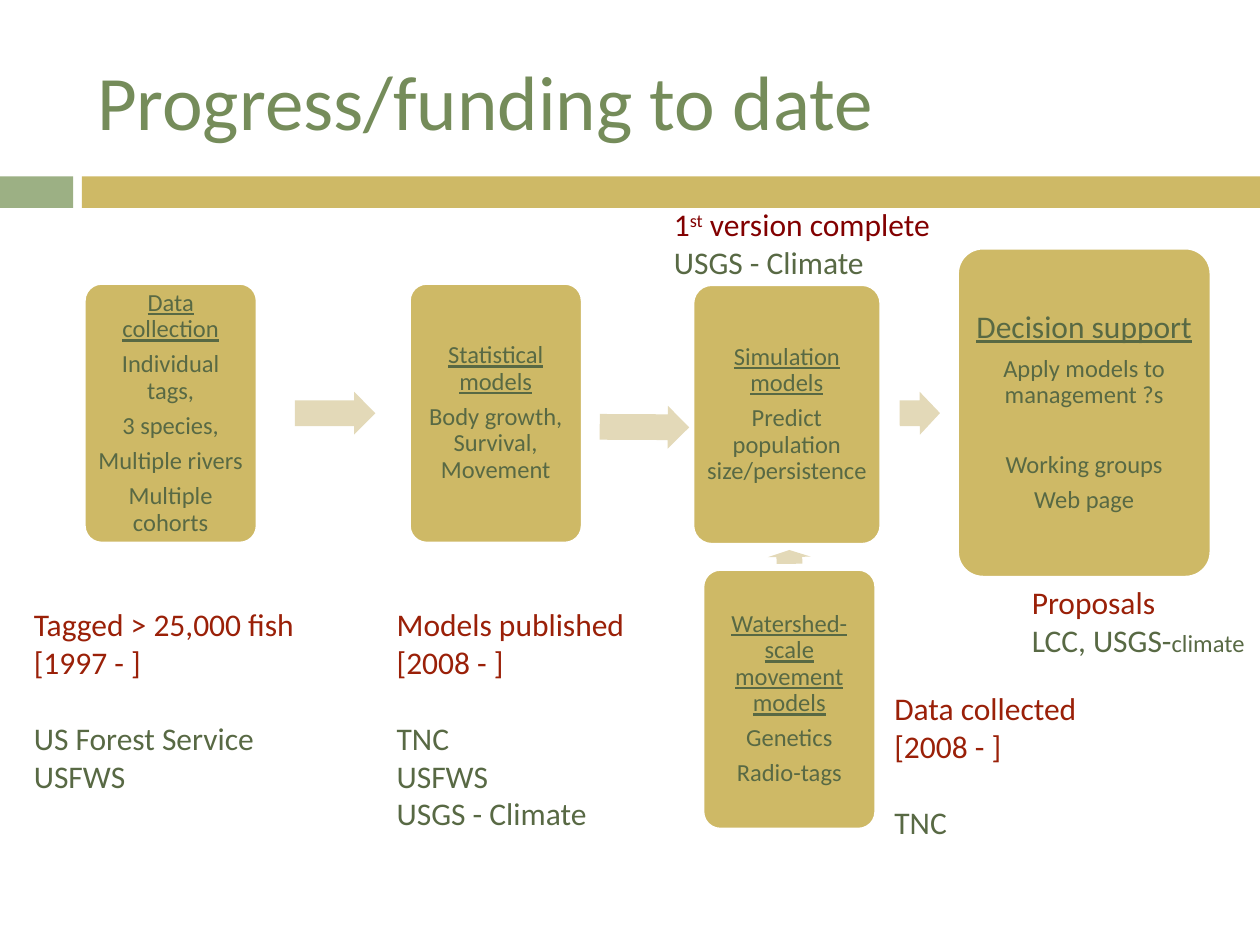
import pptx
import pptx.dml.color
import pptx.enum.shapes
import pptx.enum.text
import pptx.util

Inches = pptx.util.Inches
Pt = pptx.util.Pt
SHAPES = pptx.enum.shapes.MSO_SHAPE
ALIGN = pptx.enum.text.PP_ALIGN
ANCHOR = pptx.enum.text.MSO_ANCHOR

FONT = "Calibri"
GOLD = "CEB966"
PALE_GOLD = "E3D9B8"
SAGE = "9CB084"
TITLE_GREEN = "758C5A"
DARK_GREEN = "586944"
RED = "9A2008"
DARK_RED = "820000"
WHITE = "FFFFFF"
BODY_SIZE = 14
CAPTION_SIZE = 18
BODY_LINE_GAP = 20
CAPTION_LINE_GAP = 22

# left, top, width, height, margin, heading size, heading, body lines
STAGES = [
    (0.67, 2.25, 1.37, 2.06, 0.06, 14, "Data collection",
     ["Individual tags,", "3 species,", "Multiple rivers", "Multiple cohorts"]),
    (3.25, 2.25, 1.37, 2.06, 0.06, 14, "Statistical models",
     ["Body growth, Survival, Movement"]),
    (5.58, 4.52, 1.37, 2.06, 0.06, 14, "Watershed-scale movement models",
     ["Genetics", "Radio-tags"]),
    (5.5, 2.26, 1.49, 2.06, 0.06, 14, "Simulation models",
     ["Predict population size/persistence"]),
    (7.6, 1.97, 2.01, 2.61, 0.07, 18, "Decision support",
     ["Apply models to management ?s", "Working groups", "Web page"]),
]
LINES_AFTER_GAP = {"Working groups"}

# left, top, width, height, rotation
ARROWS = [
    (2.34, 3.11, 0.64, 0.34, 0),
    (4.76, 3.22, 0.71, 0.34, 0.3),
    (6.21, 4.25, 0.11, 0.34, 269.4),
    (7.14, 3.11, 0.32, 0.34, 359.6),
]

# left, top, width, height, status lines, funders
CAPTIONS = [
    (0.17, 4.75, 2.29, 1.62, ["Tagged > 25,000 fish", "[1997 - ]"],
     ["US Forest Service", "USFWS"]),
    (3.05, 4.75, 2.03, 1.92, ["Models published", "[2008 - ]"],
     ["TNC", "USFWS", "USGS - Climate"]),
    (7, 5.42, 1.66, 1.31, ["Data collected", "[2008 - ]"], ["TNC"]),
]


def rgb(value):
    return pptx.dml.color.RGBColor.from_string(value)


def place(shape, left, top, width, height):
    shape.left, shape.top = Inches(left), Inches(top)
    shape.width, shape.height = Inches(width), Inches(height)


def add_run(paragraph, text, size, color, underline=None):
    run = paragraph.add_run()
    run.text = text
    run.font.name = FONT
    run.font.size = Pt(size)
    run.font.color.rgb = rgb(color)
    run.font.underline = underline
    return run


def next_paragraph(frame):
    """Return the empty first paragraph of a frame, or a new one after it."""
    first = frame.paragraphs[0]
    return frame.add_paragraph() if first.runs else first


def add_filled_shape(slide, kind, left, top, width, height, fill):
    shape = slide.shapes.add_shape(
        kind, Inches(left), Inches(top), Inches(width), Inches(height))
    shape.shadow.inherit = False
    shape.fill.solid()
    shape.fill.fore_color.rgb = rgb(fill)
    shape.line.fill.background()
    return shape


def add_title(slide, text):
    title = slide.shapes.title
    place(title, 0.67, 0.25, 8.92, 1.08)
    title.text_frame.vertical_anchor = ANCHOR.MIDDLE
    paragraph = title.text_frame.paragraphs[0]
    paragraph.alignment = ALIGN.LEFT
    add_run(paragraph, text, 44, TITLE_GREEN)


def add_stage(slide, left, top, width, height, margin, heading_size, heading, body):
    box = add_filled_shape(slide, SHAPES.ROUNDED_RECTANGLE,
                           left, top, width, height, GOLD)
    box.adjustments[0] = 0.1
    box.line.color.rgb = rgb(WHITE)
    box.line.width = Pt(1.5)
    frame = box.text_frame
    frame.word_wrap = True
    frame.vertical_anchor = ANCHOR.MIDDLE
    frame.margin_left = frame.margin_right = Inches(margin)
    frame.margin_top = frame.margin_bottom = Inches(margin)
    for text in [heading, *body]:
        is_heading = text == heading
        size = heading_size if is_heading else BODY_SIZE
        paragraph = next_paragraph(frame)
        paragraph.alignment = ALIGN.CENTER
        paragraph.line_spacing = 0.9
        paragraph.space_after = Pt(round(size * 0.35, 1))
        if text in LINES_AFTER_GAP:
            paragraph.space_before = Pt(BODY_LINE_GAP)
        add_run(paragraph, text, size, DARK_GREEN, is_heading)


def add_arrow(slide, left, top, width, height, rotation):
    arrow = add_filled_shape(slide, SHAPES.RIGHT_ARROW,
                             left, top, width, height, PALE_GOLD)
    arrow.adjustments[0] = 0.6
    arrow.adjustments[1] = 0.5
    arrow.rotation = rotation


def add_text_frame(slide, left, top, width, height):
    box = slide.shapes.add_textbox(
        Inches(left), Inches(top), Inches(width), Inches(height))
    box.text_frame.word_wrap = False
    box.text_frame.auto_size = pptx.enum.text.MSO_AUTO_SIZE.SHAPE_TO_FIT_TEXT
    return box.text_frame


def add_caption(slide, left, top, width, height, status, funders):
    frame = add_text_frame(slide, left, top, width, height)
    for text in status:
        add_run(next_paragraph(frame), text, CAPTION_SIZE, RED)
    for index, text in enumerate(funders):
        paragraph = next_paragraph(frame)
        if index == 0:
            paragraph.space_before = Pt(CAPTION_LINE_GAP)
        add_run(paragraph, text, CAPTION_SIZE, DARK_GREEN)


def add_proposals(slide):
    frame = add_text_frame(slide, 8.09, 4.58, 1.91, 0.71)
    add_run(next_paragraph(frame), "Proposals", CAPTION_SIZE, RED)
    funders = next_paragraph(frame)
    add_run(funders, "LCC, USGS-", CAPTION_SIZE, DARK_GREEN)
    add_run(funders, "climate", BODY_SIZE, DARK_GREEN)


def add_version_note(slide):
    frame = add_text_frame(slide, 5.25, 1.58, 2.27, 0.71)
    version = next_paragraph(frame)
    add_run(version, "1", CAPTION_SIZE, DARK_RED)
    ordinal = add_run(version, "st", CAPTION_SIZE, DARK_RED)
    ordinal._r.get_or_add_rPr().set("baseline", "30000")
    add_run(version, " version complete", CAPTION_SIZE, DARK_RED)
    add_run(next_paragraph(frame), "USGS - Climate", CAPTION_SIZE, DARK_GREEN)


def main():
    presentation = pptx.Presentation()
    presentation.slide_width = Inches(10)
    presentation.slide_height = Inches(7.5)
    slide = presentation.slides.add_slide(presentation.slide_layouts[5])

    add_title(slide, "Progress/funding to date")
    add_filled_shape(slide, SHAPES.RECTANGLE, 0, 1.4, 0.58, 0.25, SAGE)
    add_filled_shape(slide, SHAPES.RECTANGLE, 0.65, 1.4, 9.35, 0.25, GOLD)
    for stage in STAGES:
        add_stage(slide, *stage)
    for arrow in ARROWS:
        add_arrow(slide, *arrow)
    for caption in CAPTIONS:
        add_caption(slide, *caption)
    add_proposals(slide)
    add_version_note(slide)

    presentation.save("out.pptx")


if __name__ == "__main__":
    main()
